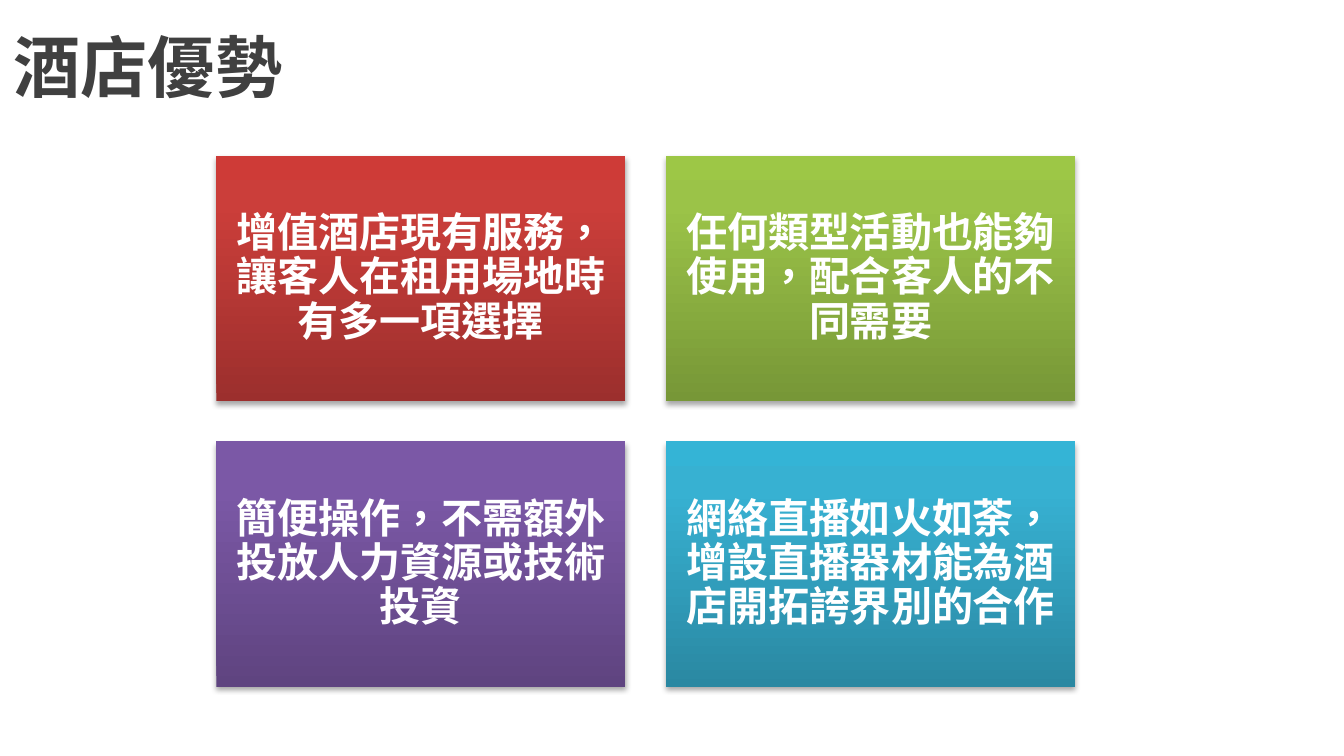
from copy import deepcopy
from dataclasses import dataclass

from lxml import etree
from pptx import Presentation
from pptx.dml.color import RGBColor
from pptx.enum.lang import MSO_LANGUAGE_ID
from pptx.enum.shapes import MSO_SHAPE
from pptx.enum.text import MSO_ANCHOR, PP_ALIGN
from pptx.oxml.ns import qn
from pptx.util import Inches, Pt

RECTANGLE = MSO_SHAPE.RECTANGLE
MIDDLE = MSO_ANCHOR.MIDDLE
LEFT, CENTER = PP_ALIGN.LEFT, PP_ALIGN.CENTER
CHINESE = MSO_LANGUAGE_ID.TRADITIONAL_CHINESE
TITLE_ONLY = 5


@dataclass(frozen=True)
class Theme:
    """Colours, font and type sizes of the slide."""
    font: str = "Noto Sans CJK SC"
    title_size: int = 36
    card_size: int = 22
    title_color: str = "404040"
    card_color: str = "FFFFFF"
    red: tuple = ("9C2F2D", "CB3E3A", "CE3B37")
    green: tuple = ("779737", "9BC348", "9DC746")
    purple: tuple = ("5F4480", "7B58A6", "7C57A8")
    blue: tuple = ("2A88A2", "37B1D2", "34B4D6")
    stops: tuple = (0, 0.8, 1)
    shadow_color: str = "000000"


THEME = Theme()
ADVANTAGES = [
    ("增值酒店現有服務，讓客人在租用場地時有多一項選擇", THEME.red),
    ("任何類型活動也能夠使用，配合客人的不同需要", THEME.green),
    ("簡便操作，不需額外投放人力資源或技術投資", THEME.purple),
    ("網絡直播如火如荼，增設直播器材能為酒店開拓誇界別的合作", THEME.blue),
]


def write_text(shape, text, *, size, color, align, spacing=1.0, inset=0.1):
    """Fill a shape with one bold paragraph, centred vertically."""
    frame = shape.text_frame
    frame.word_wrap = True
    frame.vertical_anchor = MIDDLE
    frame.margin_left = frame.margin_right = Inches(inset)
    para = frame.paragraphs[0]
    para.alignment = align
    para.line_spacing = spacing
    span = para.add_run()
    span.text = text
    span.font.size = Pt(size)
    span.font.bold = True
    span.font.language_id = CHINESE
    span.font.color.rgb = RGBColor.from_string(color)
    span.font.name = THEME.font
    properties = span.font._element
    etree.SubElement(properties, qn("a:ea"), typeface=THEME.font)


def fill_gradient(shape, colors):
    """Apply a three-stop gradient running from bottom to top."""
    shape.fill.gradient()
    shape.fill.gradient_angle = 90
    stop_list = shape._element.spPr.find(qn("a:gradFill")).find(qn("a:gsLst"))
    stop_list.append(deepcopy(stop_list[-1]))
    for stop, color, position in zip(shape.fill.gradient_stops, colors, THEME.stops):
        stop.color.rgb = RGBColor.from_string(color)
        stop.position = position


def add_shadow(shape):
    """Give a shape a soft shadow falling straight down."""
    shape.shadow.inherit = False
    effects = shape._element.spPr.find(qn("a:effectLst"))
    shadow = etree.SubElement(
        effects, qn("a:outerShdw"), blurRad=str(Pt(3.1)), dist=str(Pt(1.8)),
        dir="5400000", rotWithShape="0")
    color = etree.SubElement(shadow, qn("a:srgbClr"), val=THEME.shadow_color)
    etree.SubElement(color, qn("a:alpha"), val="35000")


def place_title(page, text, left, top, width, height):
    """Move and format the title placeholder."""
    title = page.shapes.title
    title.left, title.top = Inches(left), Inches(top)
    title.width, title.height = Inches(width), Inches(height)
    write_text(title, text, size=THEME.title_size, color=THEME.title_color, align=LEFT)


def place_card(page, text, colors, left, top, width, height):
    """Draw one advantage card."""
    card = page.shapes.add_shape(
        RECTANGLE, Inches(left), Inches(top), Inches(width), Inches(height))
    fill_gradient(card, colors)
    card.line.fill.background()
    add_shadow(card)
    write_text(card, text, size=THEME.card_size, color=THEME.card_color,
               align=CENTER, spacing=0.9, inset=0.09)


def place_card_grid(page, cards, left, top, width, height, columns=2, gap=0.3):
    """Lay the cards out in an evenly spaced grid."""
    rows = -(-len(cards) // columns)
    card_width = (width - gap * (columns - 1)) / columns
    card_height = (height - gap * (rows - 1)) / rows
    for index, (text, colors) in enumerate(cards):
        row, column = divmod(index, columns)
        place_card(page, text, colors, left + column * (card_width + gap),
                   top + row * (card_height + gap), card_width, card_height)


def main():
    """Build and save the slide."""
    deck = Presentation()
    deck.slide_width = Inches(10)
    deck.slide_height = deck.slide_width * 9 // 16
    page = deck.slides.add_slide(deck.slide_layouts[TITLE_ONLY])
    place_title(page, "酒店優勢", 0, 0, 10, 0.97)
    place_card_grid(page, ADVANTAGES, 1.61, 1.16, 6.39, 3.95)
    deck.save("out.pptx")


if __name__ == "__main__":
    main()
